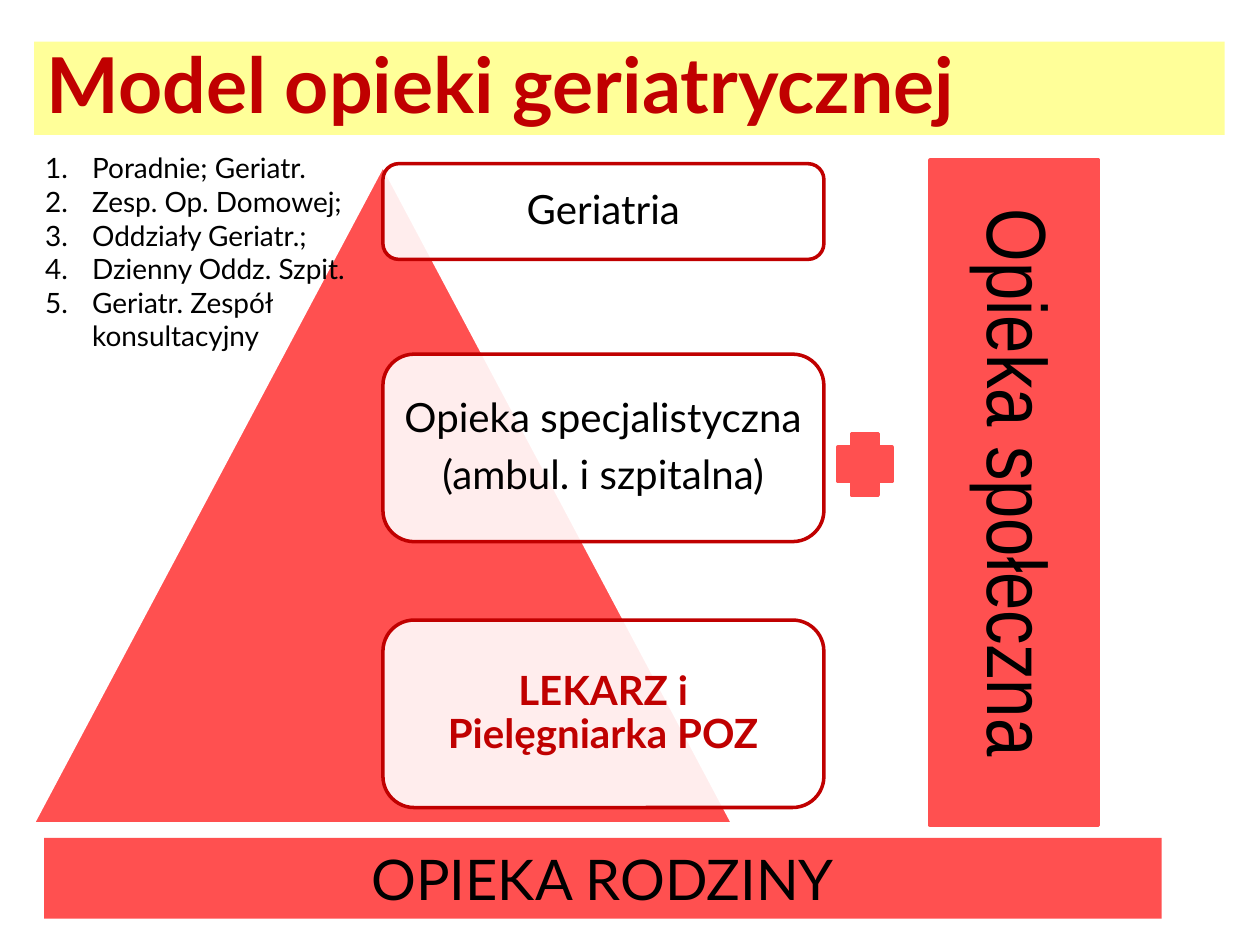
from lxml.etree import SubElement
from pptx import Presentation
from pptx.dml.color import RGBColor
from pptx.enum.shapes import MSO_SHAPE as Shape
from pptx.enum.text import MSO_ANCHOR as Anchor, PP_ALIGN as Align
from pptx.oxml.ns import qn
from pptx.util import Cm, Pt

RED = RGBColor(0xFF, 0x50, 0x50)
DARK_RED = RGBColor(0xC0, 0x00, 0x00)
YELLOW = RGBColor(0xFF, 0xFF, 0x99)
WHITE = RGBColor(0xFF, 0xFF, 0xFF)
BLACK = RGBColor(0x00, 0x00, 0x00)

presentation = Presentation()
presentation.slide_width, presentation.slide_height = Cm(25.4), Cm(19.05)
slide = presentation.slides.add_slide(presentation.slide_layouts[6])


def add_shape(kind, left, top, width, height, fill, line=None):
    shape = slide.shapes.add_shape(kind, Cm(left), Cm(top), Cm(width), Cm(height))
    shape.shadow.inherit = False
    shape.fill.solid()
    shape.fill.fore_color.rgb = fill
    if line is None:
        shape.line.fill.background()
    else:
        shape.line.color.rgb = line
        shape.line.width = Pt(2)
    return shape


def write(shape, lines, size, color=BLACK, bold=False, align=Align.CENTER,
          anchor=Anchor.MIDDLE, font="Lato"):
    """Fill the shape with one paragraph per line and return the paragraphs."""
    frame = shape.text_frame
    frame.word_wrap = True
    frame.vertical_anchor = anchor
    for index, line in enumerate(lines):
        paragraph = frame.add_paragraph() if index else frame.paragraphs[0]
        paragraph.alignment = align
        run = paragraph.add_run()
        run.text = line
        run.font.name = font
        run.font.size = Pt(size)
        run.font.bold = bold
        run.font.color.rgb = color
    return frame.paragraphs


# Title
title = add_shape(Shape.RECTANGLE, 0.69, 0.84, 24, 1.88, YELLOW)
write(title, ["Model opieki geriatrycznej"], 44, DARK_RED, True, Align.LEFT, Anchor.BOTTOM)

# Pyramid and its three levels of care
add_shape(Shape.ISOSCELES_TRIANGLE, 0.66, 3.33, 14.12, 13.28, RED, WHITE)
levels = [
    (3.3, 1.93, ["Geriatria"], BLACK, False),
    (7.14, 3.78, ["Opieka specjalistyczna", "(ambul. i szpitalna)"], BLACK, False),
    (12.5, 3.78, ["LEKARZ i Pielęgniarka POZ"], DARK_RED, True),
]
for top, height, lines, color, bold in levels:
    level = add_shape(Shape.ROUNDED_RECTANGLE, 7.72, top, 8.89, height, WHITE, DARK_RED)
    fill_color = level.fill._xPr.find(qn("a:solidFill"))[0]
    SubElement(fill_color, qn("a:alpha")).set("val", "90000")
    frame = level.text_frame
    frame.margin_left = frame.margin_right = Cm(0.25)
    frame.margin_top = frame.margin_bottom = Cm(0.25)
    for paragraph in write(level, lines, 23, color, bold):
        paragraph.line_spacing = 0.9
        paragraph.space_after = Pt(8)

# Numbered list of geriatric services
services = slide.shapes.add_textbox(Cm(0.66), Cm(2.92), Cm(6.86), Cm(4.37))
service_names = [
    "Poradnie; Geriatr.",
    "Zesp. Op. Domowej;",
    "Oddziały Geriatr.;",
    "Dzienny Oddz. Szpit.",
    "Geriatr. Zespół konsultacyjny",
]
for paragraph in write(services, service_names, 16, align=Align.LEFT, anchor=Anchor.TOP):
    properties = paragraph._p.get_or_add_pPr()
    properties.set("marL", str(Cm(0.95)))
    properties.set("indent", str(-Cm(0.95)))
    SubElement(properties, qn("a:buFont")).set("typeface", "+mj-lt")
    SubElement(properties, qn("a:buAutoNum")).set("type", "arabicPeriod")

# Social care, added to the pyramid
add_shape(Shape.CROSS, 16.89, 8.74, 1.09, 1.24, RED, RED)
add_shape(Shape.RECTANGLE, 18.75, 3.23, 3.4, 13.41, RED, RED)
social_care = slide.shapes.add_textbox(Cm(19.15), Cm(3.23), Cm(2.57), Cm(13))
social_care.text_frame._txBody.bodyPr.set("vert", "vert")
write(social_care, ["Opieka społeczna"], 48, anchor=Anchor.TOP, font="Arial Narrow")

# Family care as the base
family_care = add_shape(Shape.RECTANGLE, 0.89, 16.89, 22.53, 1.63, RED)
write(family_care, ["OPIEKA RODZINY"], 32, anchor=Anchor.TOP)

presentation.save("out.pptx")
